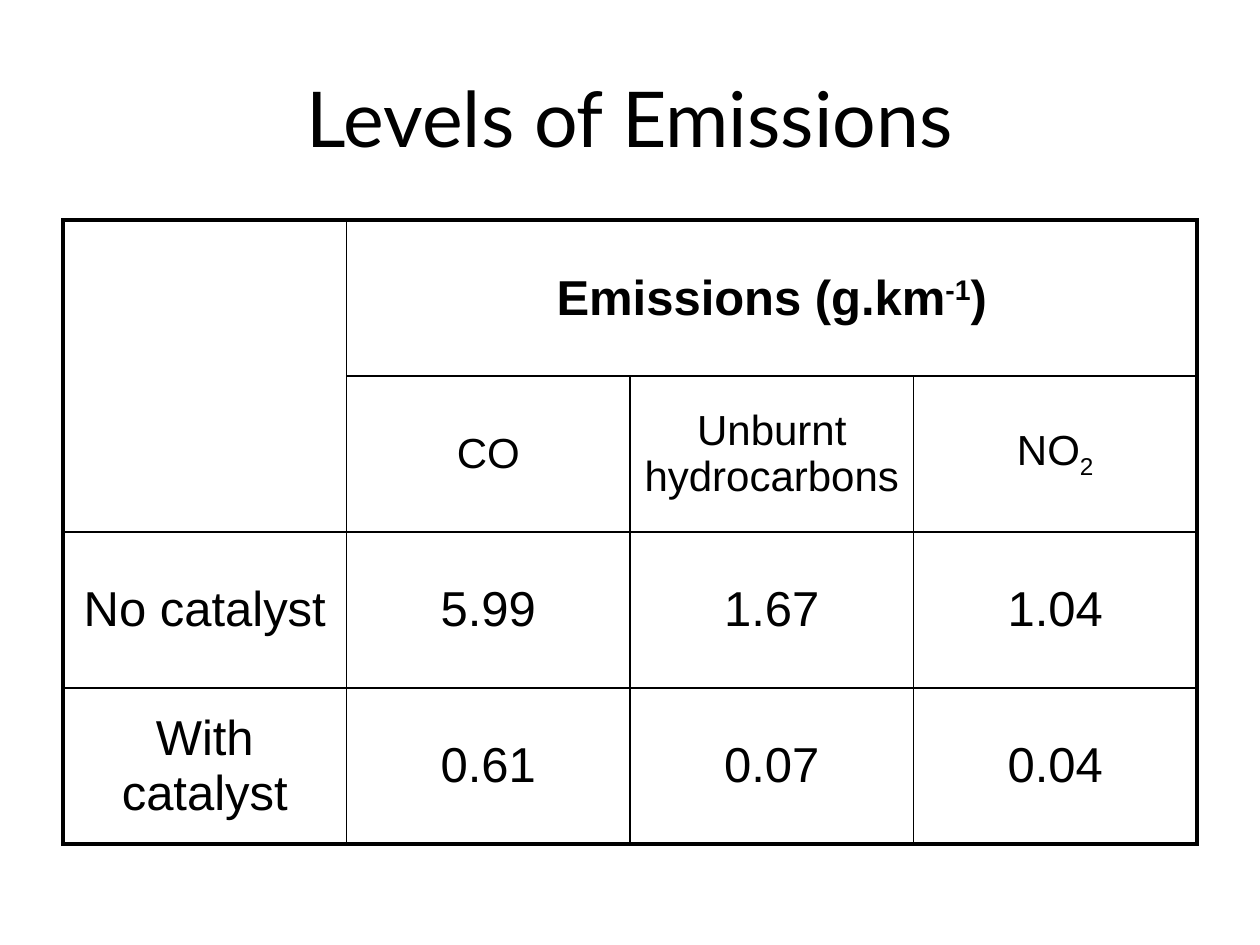
from lxml.etree import SubElement
from pptx import Presentation
from pptx.dml.color import RGBColor
from pptx.enum.text import MSO_ANCHOR as Anchor, PP_ALIGN as Align
from pptx.oxml.ns import qn
from pptx.util import Pt

BLACK = RGBColor(0, 0, 0)
SCALE = 914400 / 126
THIN, THICK = Pt(1), Pt(2.25)
ROWS, COLS = 4, 4


def px(length):
    return round(length * SCALE)


def add_border(cell, side, width):
    line = SubElement(cell._tc.get_or_add_tcPr(), qn(f"a:ln{side}"), w=str(width))
    fill = SubElement(line, qn("a:solidFill"))
    SubElement(fill, qn("a:srgbClr"), val=str(BLACK))


deck = Presentation()
deck.slide_width, deck.slide_height = px(1260), px(945)
page = deck.slides.add_slide(deck.slide_layouts[5])

title = page.shapes.title
title.left, title.top, title.width, title.height = px(63), px(38), px(1134), px(158)
title.text_frame.text = "Levels of Emissions"
title.text_frame.vertical_anchor = Anchor.MIDDLE
heading = title.text_frame.paragraphs[0]
heading.alignment = Align.CENTER
heading.runs[0].font.name = "Lato"
heading.runs[0].font.size = Pt(44)
heading.runs[0].font.color.rgb = BLACK

table = page.shapes.add_table(ROWS, COLS, px(63), px(220), px(1134), px(624)).table
table.first_row = table.horz_banding = False
table.cell(0, 0).merge(table.cell(1, 0))
table.cell(0, 1).merge(table.cell(0, 3))

contents = [
    [[], [("Emissions (g.km", 0), ("-1", 30), (")", 0)], [], []],
    [[], [("CO", 0)], [("Unburnt hydrocarbons", 0)], [("NO", 0), ("2", -25)]],
    [[("No catalyst", 0)], [("5.99", 0)], [("1.67", 0)], [("1.04", 0)]],
    [[("With catalyst", 0)], [("0.61", 0)], [("0.07", 0)], [("0.04", 0)]],
]
sizes = [28, 24, 28, 28]

for row, spans_by_cell in enumerate(contents):
    for col, spans in enumerate(spans_by_cell):
        cell = table.cell(row, col)
        cell.vertical_anchor = Anchor.MIDDLE
        right = col + (cell.span_width if cell.is_merge_origin else 1)
        bottom = row + (cell.span_height if cell.is_merge_origin else 1)
        add_border(cell, "L", THICK if col == 0 else THIN)
        add_border(cell, "R", THICK if right == COLS else THIN)
        add_border(cell, "T", THICK if row == 0 else THIN)
        add_border(cell, "B", THICK if bottom == ROWS else THIN)
        cell.fill.background()
        if not spans:
            continue
        para = cell.text_frame.paragraphs[0]
        para.alignment = Align.CENTER
        spacing = SubElement(para._p.get_or_add_pPr(), qn("a:spcBef"))
        SubElement(spacing, qn("a:spcPct"), val="20000")
        for text, baseline in spans:
            span = para.add_run()
            span.text = text
            span.font.name = "Arial"
            span.font.size = Pt(sizes[row])
            span.font.bold = row == 0
            span.font.color.rgb = BLACK
            if baseline:
                span.font._element.set("baseline", str(baseline * 1000))

deck.save("out.pptx")
